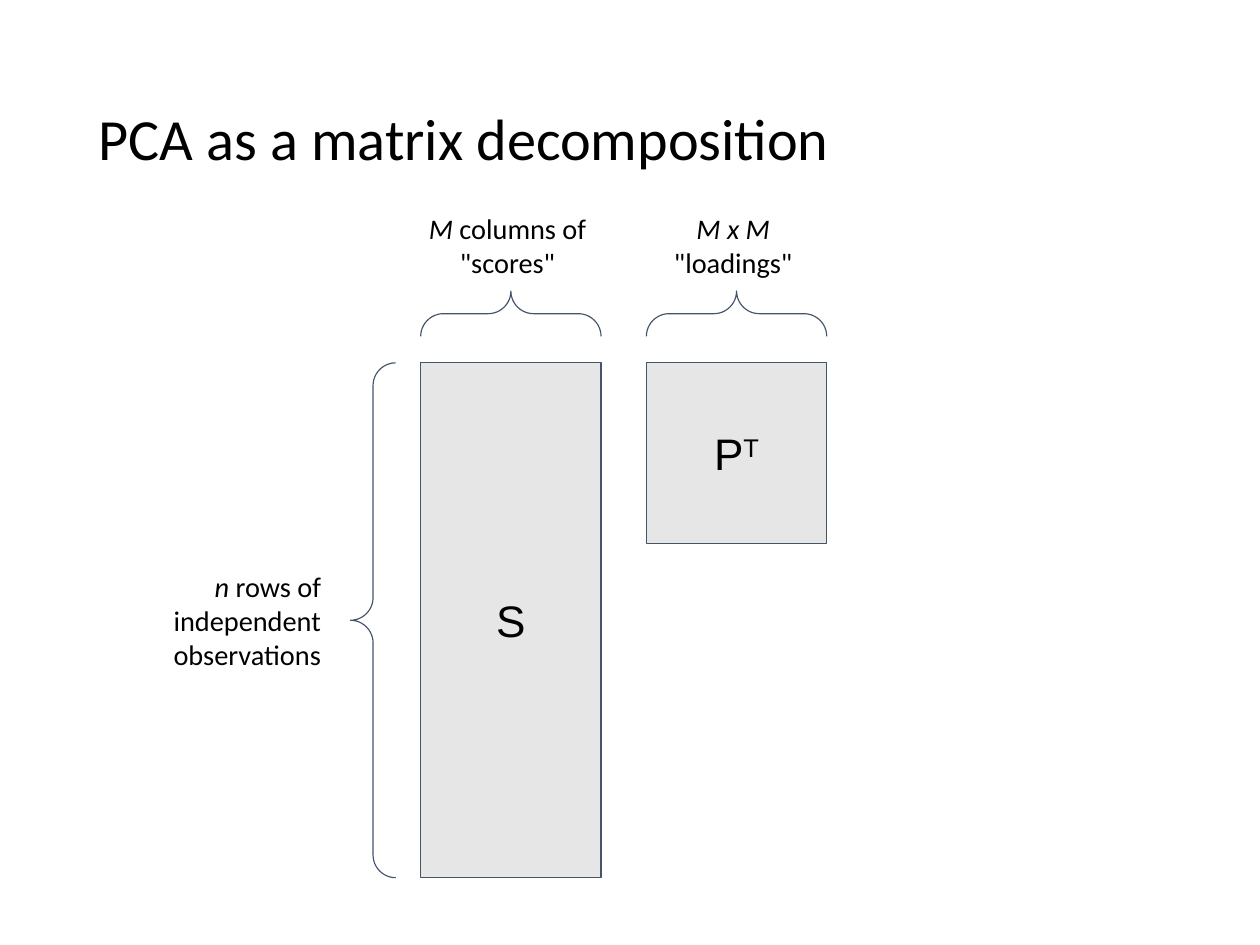
from pptx import Presentation
from pptx.dml.color import RGBColor
from pptx.enum.shapes import MSO_SHAPE
from pptx.enum.text import MSO_ANCHOR, MSO_AUTO_SIZE, PP_ALIGN
from pptx.util import Pt

RECT, BRACE = MSO_SHAPE.RECTANGLE, MSO_SHAPE.LEFT_BRACE
TOP, MIDDLE = MSO_ANCHOR.TOP, MSO_ANCHOR.MIDDLE
LEFT, CENTER, RIGHT = PP_ALIGN.LEFT, PP_ALIGN.CENTER, PP_ALIGN.RIGHT
GROW = MSO_AUTO_SIZE.SHAPE_TO_FIT_TEXT


class Theme:
    ink = RGBColor(0x00, 0x00, 0x00)
    edge = RGBColor(0x44, 0x54, 0x6A)
    fill = RGBColor(0xE7, 0xE6, 0xE6)
    body, symbol = "Calibri", "Arial"
    title_size, symbol_size, label_size = 37, 28, 18
    line = 0.75


# Each paragraph is a list of (text, style) runs.
TITLE = [[("PCA as a matrix decomposition", "")]]
ROWS = [[("n", "italic"), (" rows of", "")],
        [("independent observations", "")]]
MATRICES = [
    {"left": 267.1, "height": 326.9,
     "name": [[("S", "")]],
     "label": [[("M", "italic"), (" columns of", "")], [('"scores"', "")]]},
    {"left": 410.4, "height": 114.5,
     "name": [[("P", ""), ("T", "super")]],
     "label": [[("M x M", "italic")], [('"loadings"', "")]]},
]

MATRIX_TOP, MATRIX_WIDTH = 230.4, 114.5
BRACE_DEPTH, BRACE_MID = 28.8, 199.2
LABEL_TOP, LABEL_WIDTH, LABEL_HEIGHT, LABEL_SHIFT = 126.7, 177.8, 58.3, -2.1
ROW_BRACE_LEFT = 222.5

deck = Presentation()
deck.slide_width, deck.slide_height = Pt(800), Pt(600)
slide = deck.slides.add_slide(deck.slide_layouts[6])


def write(shape, paras, font, size, align, anchor=TOP, inset=7.2, space=None):
    frame = shape.text_frame
    frame.word_wrap = True
    frame.vertical_anchor = anchor
    frame.margin_left = frame.margin_right = Pt(inset)
    frame.margin_top = frame.margin_bottom = Pt(inset)
    for i, runs in enumerate(paras):
        para = frame.add_paragraph() if i else frame.paragraphs[0]
        para.alignment = align
        if space:
            para.line_spacing = space
        for text, style in runs:
            run = para.add_run()
            run.text = text
            run.font.name, run.font.size = font, Pt(size)
            run.font.color.rgb = Theme.ink
            run.font.italic = style == "italic"
            if style == "super":
                run._r.get_or_add_rPr().set("baseline", "30000")


def add_box(*place):
    return slide.shapes.add_textbox(*map(Pt, place))


def add_label(place, paras, align):
    box = add_box(*place)
    write(box, paras, Theme.body, Theme.label_size, align)
    box.text_frame.auto_size = GROW


def add_outline(kind, *place):
    shape = slide.shapes.add_shape(kind, *map(Pt, place))
    shape.shadow.inherit = False
    shape.line.color.rgb = Theme.edge
    shape.line.width = Pt(Theme.line)
    return shape


def add_brace(mid_x, mid_y, span, turn=0):
    """Centre a brace on a point; turn rotates it in degrees."""
    brace = add_outline(BRACE, mid_x - BRACE_DEPTH / 2, mid_y - span / 2,
                        BRACE_DEPTH, span)
    brace.fill.background()
    brace.adjustments[0] = brace.adjustments[1] = 0.5
    brace.rotation = turn


def add_matrix(left, height, name, label):
    block = add_outline(RECT, left, MATRIX_TOP, MATRIX_WIDTH, height)
    block.fill.solid()
    block.fill.fore_color.rgb = Theme.fill
    write(block, name, Theme.symbol, Theme.symbol_size, CENTER, MIDDLE)
    mid = left + MATRIX_WIDTH / 2
    add_brace(mid, BRACE_MID, MATRIX_WIDTH, 90)
    add_label((mid + LABEL_SHIFT - LABEL_WIDTH / 2, LABEL_TOP,
               LABEL_WIDTH, LABEL_HEIGHT), label, CENTER)


write(add_box(54.7, 31.7, 689.8, 115.9), TITLE, Theme.body,
      Theme.title_size, LEFT, MIDDLE, 7.9, 0.9)
for matrix in MATRICES:
    add_matrix(**matrix)
add_label((97.9, 354.2, 113, 79.2), ROWS, RIGHT)
tall = MATRICES[0]["height"]
add_brace(ROW_BRACE_LEFT + BRACE_DEPTH / 2, MATRIX_TOP + tall / 2, tall)

deck.save("out.pptx")
